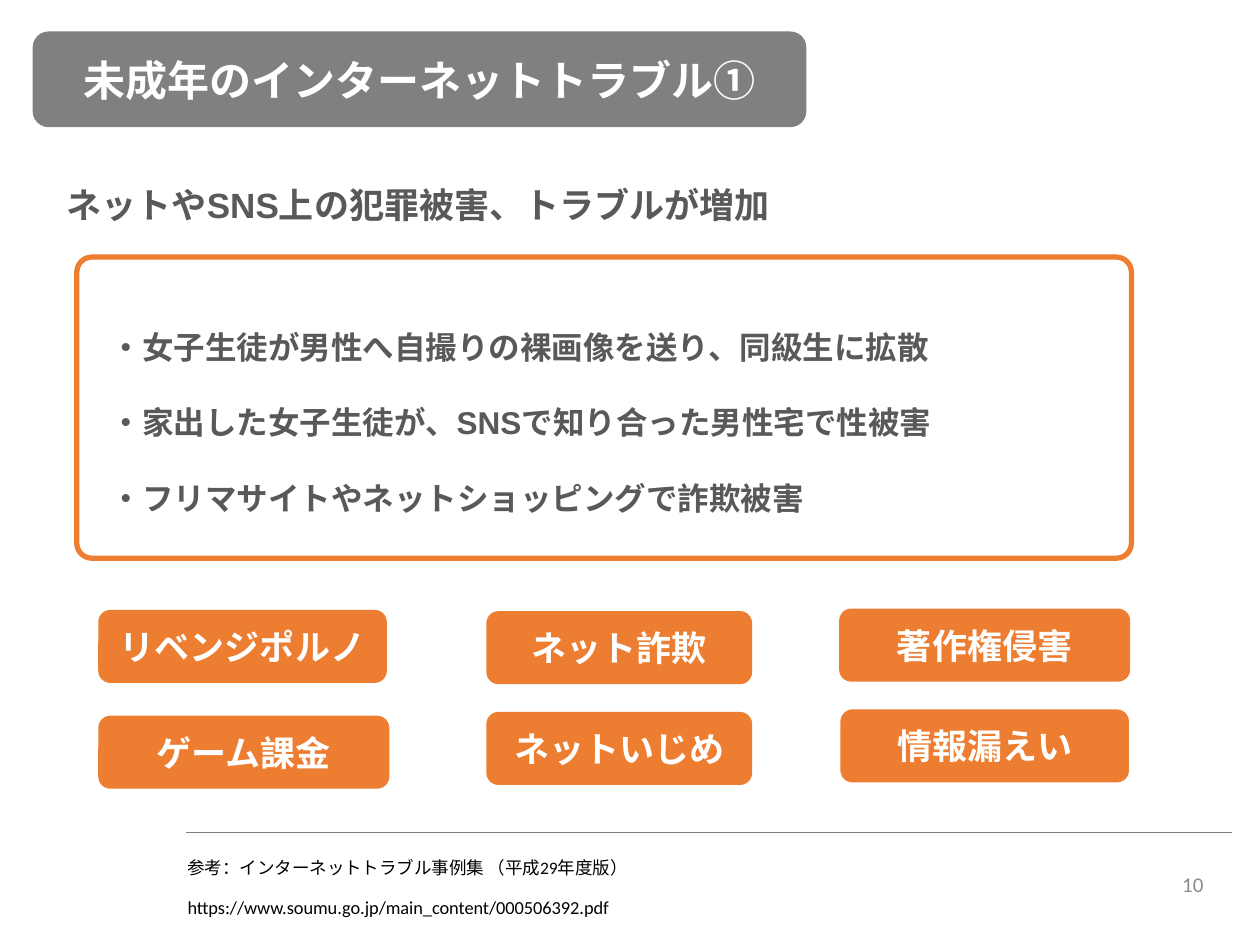
from dataclasses import dataclass

import pptx
import pptx.dml.color
import pptx.enum.shapes
import pptx.enum.text
import pptx.oxml.ns
import pptx.util
from lxml import etree

Inches = pptx.util.Inches
RGBColor = pptx.dml.color.RGBColor
Align = pptx.enum.text.PP_ALIGN
Anchor = pptx.enum.text.MSO_ANCHOR
qn = pptx.oxml.ns.qn

GRAY = RGBColor(0x80, 0x80, 0x80)
TEXT_GRAY = RGBColor(0x59, 0x59, 0x59)
NUMBER_GRAY = RGBColor(0x8C, 0x8C, 0x8C)
ORANGE = RGBColor(0xED, 0x7D, 0x31)
WHITE = RGBColor(0xFF, 0xFF, 0xFF)
BLACK = RGBColor(0x00, 0x00, 0x00)


@dataclass(frozen=True)
class Box:
    left: float
    top: float
    width: float
    height: float

    def lengths(self) -> tuple:
        return tuple(map(Inches, (self.left, self.top, self.width, self.height)))


@dataclass(frozen=True)
class Style:
    size: float
    color: RGBColor
    font: str = "Calibri"
    bold: bool = False
    align: Align = Align.LEFT
    anchor: Anchor = Anchor.TOP
    spacing: float = 1.0


@dataclass(frozen=True)
class Trouble:
    name: str
    box: Box


TITLE = Style(24, WHITE, "Arial", True, Align.CENTER, Anchor.MIDDLE)
LEAD = Style(20, TEXT_GRAY, "Arial", True, spacing=1.5)
CASE = Style(18, TEXT_GRAY, "Arial", True, spacing=2.0)
BADGE = Style(20, WHITE, bold=True, align=Align.CENTER, anchor=Anchor.MIDDLE)
NUMBER = Style(12, NUMBER_GRAY, align=Align.RIGHT, anchor=Anchor.MIDDLE)

TITLE_BOX = Box(0.26, 0.25, 6.14, 0.76)
CASES = [
    "・女子生徒が男性へ自撮りの裸画像を送り、同級生に拡散",
    "・家出した女子生徒が、SNSで知り合った男性宅で性被害",
    "・フリマサイトやネットショッピングで詐欺被害",
]
BADGE_HEIGHT = 0.58
TROUBLES = [
    Trouble("リベンジポルノ", Box(0.78, 4.84, 2.29, BADGE_HEIGHT)),
    Trouble("ネット詐欺", Box(3.86, 4.85, 2.11, BADGE_HEIGHT)),
    Trouble("著作権侵害", Box(6.66, 4.83, 2.31, BADGE_HEIGHT)),
    Trouble("ゲーム課金", Box(0.78, 5.68, 2.31, BADGE_HEIGHT)),
    Trouble("ネットいじめ", Box(3.86, 5.65, 2.11, BADGE_HEIGHT)),
    Trouble("情報漏えい", Box(6.67, 5.63, 2.29, BADGE_HEIGHT)),
]


def write(shape, lines: list[str], style: Style) -> None:
    frame = shape.text_frame
    frame.word_wrap = True
    frame.auto_size = pptx.enum.text.MSO_AUTO_SIZE.NONE
    frame.vertical_anchor = style.anchor
    for index, line in enumerate(lines):
        paragraph = frame.add_paragraph() if index else frame.paragraphs[0]
        paragraph.alignment = style.align
        paragraph.line_spacing = style.spacing
        paragraph.space_before = pptx.util.Pt(0)
        run = paragraph.add_run()
        run.text = line
        run.font.size = pptx.util.Pt(style.size)
        run.font.bold = style.bold
        run.font.name = style.font
        run.font.color.rgb = style.color
        latin = run.font._element.find(qn("a:latin"))
        east_asian = etree.Element(qn("a:ea"), typeface=style.font)
        latin.addnext(east_asian)


def place(shape, box: Box) -> None:
    shape.left, shape.top, shape.width, shape.height = box.lengths()


def remove_bullets(shape) -> None:
    for paragraph in shape.text_frame.paragraphs:
        properties = paragraph._p.get_or_add_pPr()
        properties.set("marL", "0")
        properties.set("indent", "0")
        etree.SubElement(properties, qn("a:buNone"))


def add_text(slide, box: Box, line: str, style: Style) -> None:
    write(slide.shapes.add_textbox(*box.lengths()), [line], style)


def add_panel(slide, box: Box, fill: RGBColor):
    """Add a rounded rectangle without outline or shadow."""
    panel = slide.shapes.add_shape(
        pptx.enum.shapes.MSO_SHAPE.ROUNDED_RECTANGLE, *box.lengths()
    )
    panel.shadow.inherit = False
    panel.fill.solid()
    panel.fill.fore_color.rgb = fill
    panel.line.fill.background()
    return panel


def add_case_frame(slide) -> None:
    frame = add_panel(slide, Box(0.61, 2.04, 8.37, 2.39), WHITE)
    frame.adjustments[0] = 0.05
    frame.fill.background()
    frame.line.color.rgb = ORANGE
    frame.line.width = pptx.util.Pt(3)


def add_footer_rule(slide) -> None:
    rule = slide.shapes.add_connector(
        pptx.enum.shapes.MSO_CONNECTOR.STRAIGHT,
        Inches(1.48), Inches(6.61), Inches(9.78), Inches(6.61),
    )
    rule.line.color.rgb = GRAY
    rule.line.width = pptx.util.Pt(0.5)
    etree.SubElement(rule._element.spPr, qn("a:effectLst"))


def main() -> None:
    deck = pptx.Presentation()
    deck.slide_width, deck.slide_height = Inches(10), Inches(7.5)
    slide = deck.slides.add_slide(deck.slide_layouts[1])
    title, cases = slide.shapes.title, slide.placeholders[1]

    banner = add_panel(slide, TITLE_BOX, GRAY)
    title._element.addprevious(banner._element)
    place(title, TITLE_BOX)
    write(title, ["未成年のインターネットトラブル①"], TITLE)

    add_text(slide, Box(0.43, 1.24, 8.99, 0.61),
             "ネットやSNS上の犯罪被害、トラブルが増加", LEAD)

    add_case_frame(slide)
    place(cases, Box(0.78, 2.25, 7.82, 1.92))
    write(cases, CASES, CASE)
    remove_bullets(cases)

    for trouble in TROUBLES:
        write(add_panel(slide, trouble.box, ORANGE), [trouble.name], BADGE)

    add_footer_rule(slide)
    add_text(slide, Box(1.39, 6.75, 7.08, 0.27),
             "参考：インターネットトラブル事例集 （平成29年度版）", Style(10, BLACK))
    add_text(slide, Box(1.39, 7.06, 7.6, 0.28),
             "https://www.soumu.go.jp/main_content/000506392.pdf", Style(10.5, BLACK))
    add_text(slide, Box(7.4, 6.82, 2.25, 0.4), "10", NUMBER)

    deck.save("out.pptx")


if __name__ == "__main__":
    main()
